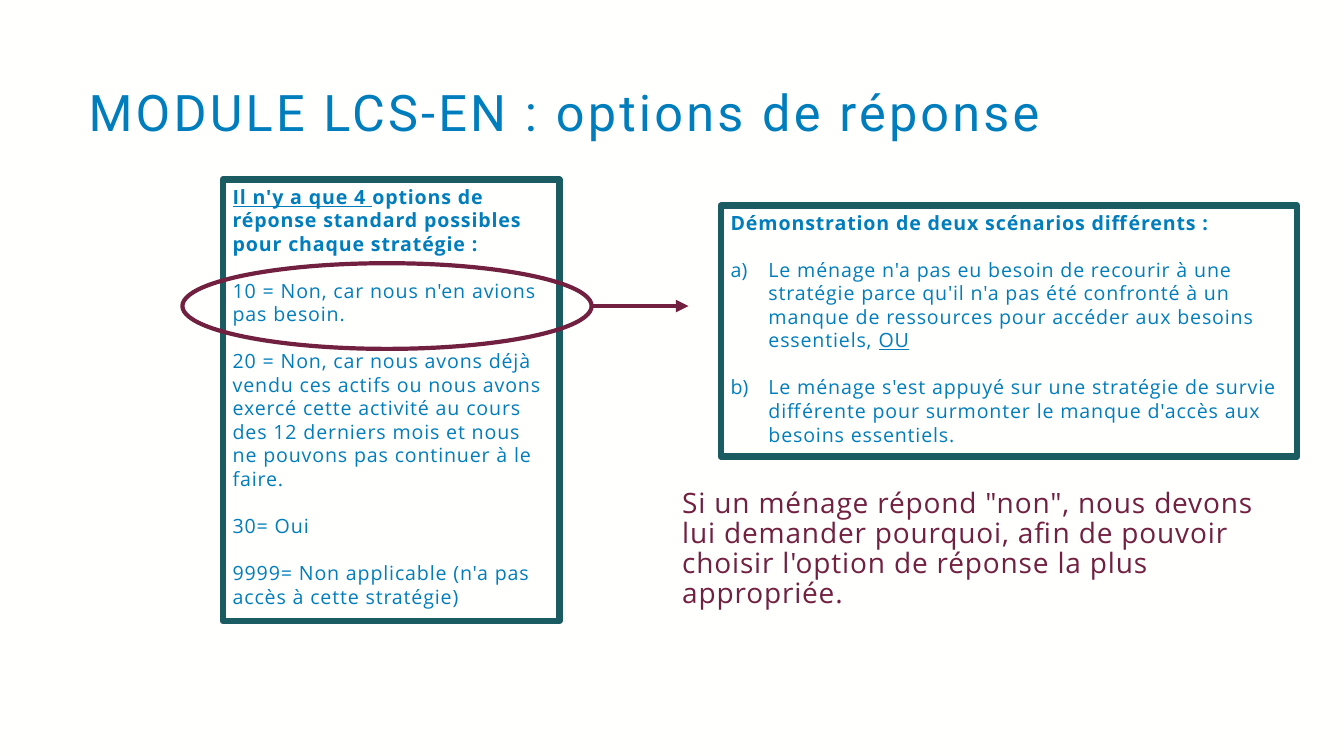
from pptx import Presentation
from pptx.dml.color import RGBColor
from pptx.enum.shapes import MSO_CONNECTOR, MSO_SHAPE
from pptx.enum.text import MSO_ANCHOR, MSO_AUTO_SIZE, PP_ALIGN
from pptx.oxml.ns import qn
from pptx.util import Pt
from lxml import etree

PAPER = RGBColor(0xFF, 0xFF, 0xFE)
BLUE = RGBColor(0x00, 0x7D, 0xBC)
TEAL = RGBColor(0x1B, 0x5B, 0x62)
PLUM = RGBColor(0x72, 0x20, 0x40)

RECTANGLE, OVAL = MSO_SHAPE.RECTANGLE, MSO_SHAPE.OVAL
STRAIGHT = MSO_CONNECTOR.STRAIGHT
TOP, MIDDLE = MSO_ANCHOR.TOP, MSO_ANCHOR.MIDDLE
LEFT = PP_ALIGN.LEFT
GROW = MSO_AUTO_SIZE.SHAPE_TO_FIT_TEXT

PARAGRAPH_GAP = 16.8
LIST_INDENT = 27

# Each paragraph is a list of (text, underlined) spans.
ANSWERS = [
    [("Il n'y a que 4 ", True),
     ("options de réponse standard possibles pour chaque stratégie :", False)],
    [("10 = Non, car nous n'en avions pas besoin.", False)],
    [("20 = Non, car nous avons déjà vendu ces actifs ou nous avons exercé "
      "cette activité au cours des 12 derniers mois et nous ne pouvons pas "
      "continuer à le faire.", False)],
    [("30= Oui", False)],
    [("9999= Non applicable (n'a pas accès à cette stratégie)", False)],
]
SCENARIOS = [
    [("Démonstration de deux scénarios différents :", False)],
    [("Le ménage n'a pas eu besoin de recourir à une stratégie parce qu'il "
      "n'a pas été confronté à un manque de ressources pour accéder aux "
      "besoins essentiels, ", False), ("OU", True)],
    [("Le ménage s'est appuyé sur une stratégie de survie différente pour "
      "surmonter le manque d'accès aux besoins essentiels.", False)],
]


class SlideBuilder:
    def __init__(self, page):
        self.page = page
        self.font = "Open Sans"
        page.background.fill.solid()
        page.background.fill.fore_color.rgb = PAPER

    def outline(self, kind, left, top, width, height, color, weight):
        shape = self.page.shapes.add_shape(
            kind, Pt(left), Pt(top), Pt(width), Pt(height))
        shape.shadow.inherit = False
        shape.fill.background()
        shape.line.color.rgb = color
        shape.line.width = Pt(weight)
        return shape

    def style(self, para, size, color, tracking, font=None, bold=False):
        """Set the paragraph font; tracking is letter spacing in points."""
        para.alignment = LEFT
        para.font.name = font or self.font
        para.font.size = Pt(size)
        para.font.bold = bold
        para.font.color.rgb = color
        defaults = para._p.get_or_add_pPr().get_or_add_defRPr()
        defaults.set("spc", str(round(tracking * 100)))

    def text(self, left, top, width, height, words, size, color, tracking,
             font=None, anchor=TOP):
        box = self.page.shapes.add_textbox(
            Pt(left), Pt(top), Pt(width), Pt(height))
        frame = box.text_frame
        frame.word_wrap = True
        frame.vertical_anchor = anchor
        para = frame.paragraphs[0]
        para.text = words
        para.line_spacing = 0.9
        self.style(para, size, color, tracking, font)

    def panel(self, left, top, width, height, paragraphs, lettered=False):
        """Framed text with a bold heading, then plain or lettered items."""
        box = self.outline(RECTANGLE, left, top, width, height, TEAL, 4.5)
        frame = box.text_frame
        frame.word_wrap = True
        frame.auto_size = GROW
        frame.vertical_anchor = TOP
        for index, spans in enumerate(paragraphs):
            para = frame.add_paragraph() if index else frame.paragraphs[0]
            if index:
                para.space_before = Pt(PARAGRAPH_GAP)
            if index and lettered:
                self.letter(para)
            self.style(para, 14, BLUE, 0.6, bold=index == 0)
            for words, underlined in spans:
                span = para.add_run()
                span.text = words
                if underlined:
                    span.font.underline = True

    def letter(self, para):
        properties = para._p.get_or_add_pPr()
        properties.set("marL", str(Pt(LIST_INDENT)))
        properties.set("indent", str(-Pt(LIST_INDENT)))
        etree.SubElement(properties, qn("a:buAutoNum"), type="alphaLcParenR")

    def arrow(self, left, right, height, color, weight):
        line = self.page.shapes.add_connector(
            STRAIGHT, Pt(left), Pt(height), Pt(right), Pt(height))
        line.line.color.rgb = color
        line.line.width = Pt(weight)
        etree.SubElement(line.line._get_or_add_ln(), qn("a:tailEnd"),
                         type="triangle")
        etree.SubElement(line._element.spPr, qn("a:effectLst"))


def main():
    deck = Presentation()
    deck.slide_width, deck.slide_height = Pt(960), Pt(540)
    builder = SlideBuilder(deck.slides.add_slide(deck.slide_layouts[6]))

    builder.text(56.2, 56.2, 870.5, 51.8,
                 "MODULE LCS-EN : options de réponse",
                 36, BLUE, 2.3, font="Roboto", anchor=MIDDLE)
    builder.panel(159.1, 128.2, 240.5, 315.4, ANSWERS)
    builder.panel(514.8, 146.9, 411.8, 179.3, SCENARIOS, lettered=True)
    builder.outline(OVAL, 130.3, 188, 292.3, 61.2, PLUM, 3)
    builder.arrow(422.6, 491.8, 218.6, PLUM, 3)
    builder.text(480.2, 345.6, 433.4, 94.3,
                 "Si un ménage répond \"non\", nous devons lui demander "
                 "pourquoi, afin de pouvoir choisir l'option de réponse la "
                 "plus appropriée.", 20, PLUM, 0.6)
    deck.save("out.pptx")


if __name__ == "__main__":
    main()
